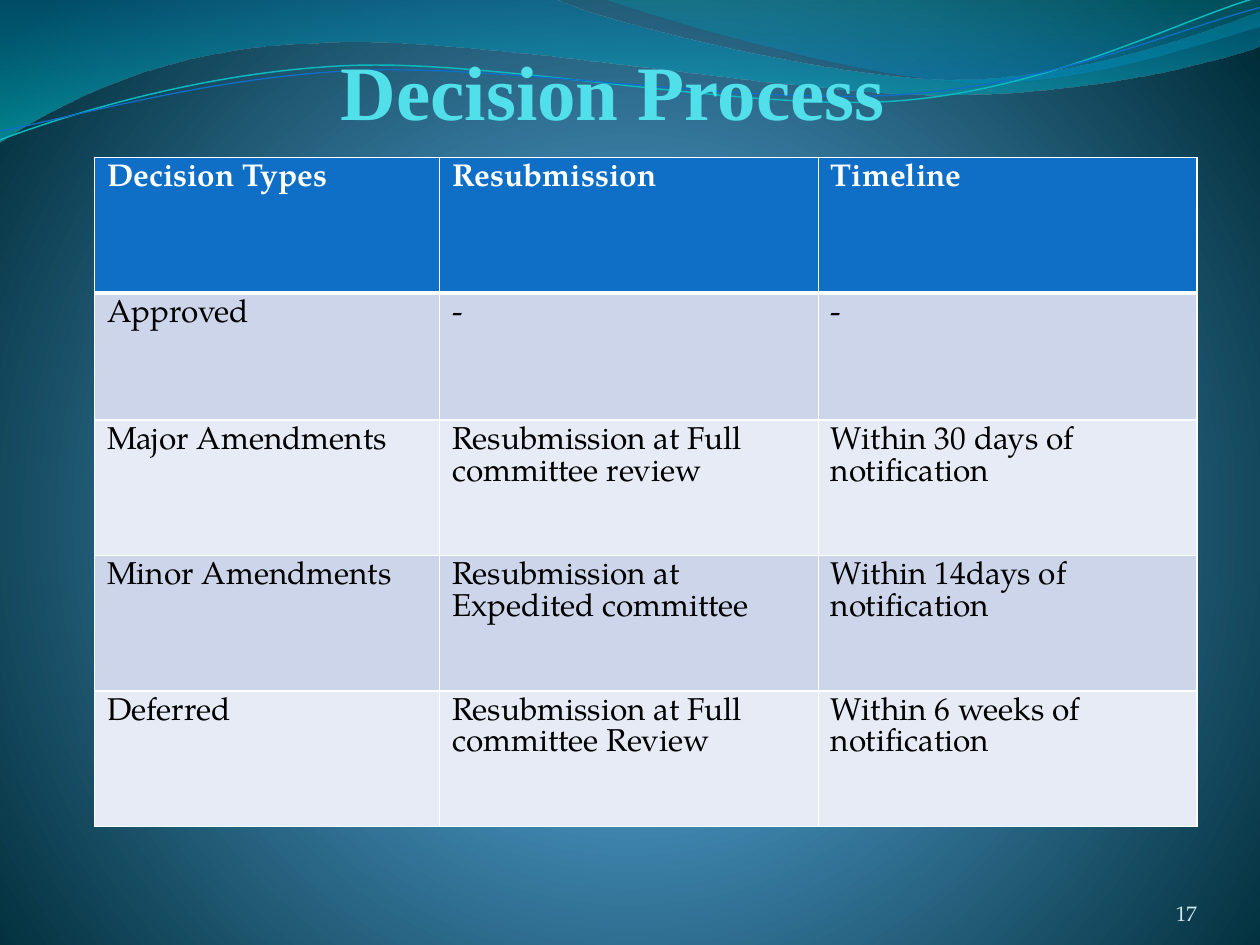
"""Build the Decision Process slide: wave decoration, title, decision table and page number."""
import math
from dataclasses import dataclass
from typing import Optional

from lxml import etree
from pptx import Presentation
from pptx import util as u
from pptx.dml.color import RGBColor
from pptx.enum import text
from pptx.oxml import ns

WHITE = RGBColor(0xFF, 0xFF, 0xFF)
BLACK = RGBColor(0x00, 0x00, 0x00)
TITLE_CYAN = RGBColor(0x51, 0xE0, 0xEA)
NUMBER_CYAN = RGBColor(0xD1, 0xEA, 0xEE)
BLUE = RGBColor(0x0F, 0x6F, 0xC6)
TEAL = RGBColor(0x0A, 0xB8, 0xBF)
DARK_BAND = RGBColor(0xCC, 0xD5, 0xEA)
LIGHT_BAND = RGBColor(0xE7, 0xEB, 0xF5)
BODY_FONT = "TeX Gyre Pagella"
TITLE_FONT = "Times New Roman"
LINE_TILT = -2.7


@dataclass(frozen=True)
class Stop:
    position: int
    color: RGBColor
    opacity: int = 100


@dataclass(frozen=True)
class Wave:
    start: tuple[float, float]
    segments: list[tuple[float, ...]]
    stops: Optional[list[Stop]] = None
    line_color: Optional[RGBColor] = None
    line_width: float = 0
    pivot: tuple[float, float] = (0, 0)
    tilt: float = 0


BACKGROUND_STOPS = [
    Stop(0, RGBColor(0x4A, 0xA0, 0xD6)),
    Stop(25, RGBColor(0x4C, 0x98, 0xC7)),
    Stop(100, RGBColor(0x00, 0x2C, 0x38)),
]
WAVES = [
    Wave((0, 0), [(4.4, -0.01), (4.76, 0.17, 6.64, 0.63, 7.58, 0.63),
                  (8.53, 0.63, 9.58, 0.26, 10, 0.09), (10.01, 0.36),
                  (9.83, 0.44, 8.7, 0.76, 7.46, 0.75),
                  (6.22, 0.75, 3.82, 0.28, 2.57, 0.34),
                  (1.29, 0.36, 0.46, 0.83, -0.01, 1.13), (0, 0)],
         stops=[Stop(0, RGBColor(0x00, 0x74, 0xA1), 45),
                Stop(100, RGBColor(0x00, 0xC6, 0xCF), 55)]),
    Wave((4.79, -0.01), [(5.09, 0.11, 6.82, 0.62, 7.69, 0.65),
                         (8.56, 0.69, 9.61, 0.32, 10, 0.21), (10, 0), (4.79, -0.01)],
         stops=[Stop(0, RGBColor(0x00, 0xA1, 0xA9), 30),
                Stop(80, RGBColor(0x00, 0x8B, 0xBF), 45)]),
    Wave((0, 1.11), [(0.48, 0.93, 1.58, 0.57, 2.77, 0.52),
                     (3.95, 0.47, 5.93, 0.89, 7.13, 0.8),
                     (8.33, 0.71, 9.38, 0.15, 9.98, -0.02)],
         line_color=TEAL, line_width=0.85, pivot=(4.99, 0.58), tilt=LINE_TILT),
    Wave((0, 1.04), [(0.47, 0.96, 1.64, 0.61, 2.83, 0.56),
                     (4.03, 0.51, 5.97, 0.84, 7.17, 0.75),
                     (8.36, 0.67, 9.41, 0.21, 10, 0.06)],
         line_color=BLUE, line_width=0.75, pivot=(5, 0.59), tilt=LINE_TILT),
]
TABLE_WIDTH, TABLE_HEIGHT = 8.75, 5.31
FIRST_COLUMN, APPROVED_ROW = 2.74, 1.01
COLUMN_WIDTHS = [FIRST_COLUMN] + [(TABLE_WIDTH - FIRST_COLUMN) / 2] * 2
ROW_HEIGHTS = [(TABLE_HEIGHT - APPROVED_ROW) / 4] * 5
ROW_HEIGHTS[1] = APPROVED_ROW
DECISIONS = [
    ("Decision Types", "Resubmission", "Timeline"),
    ("Approved", "-", "-"),
    ("Major Amendments", "Resubmission at Full committee review",
     "Within 30 days of notification"),
    ("Minor Amendments", "Resubmission at Expedited committee",
     "Within 14days of notification"),
    ("Deferred", "Resubmission at Full committee Review",
     "Within 6 weeks of notification"),
]


def apply_gradient(owner, stops: list[Stop], circular: bool = False) -> None:
    """Replace the empty fill inside an element with a gradient."""
    gradient = etree.Element(ns.qn("a:gradFill"), rotWithShape="1")
    stop_list = etree.SubElement(gradient, ns.qn("a:gsLst"))
    for stop in stops:
        entry = etree.SubElement(stop_list, ns.qn("a:gs"), pos=str(stop.position * 1000))
        color = etree.SubElement(entry, ns.qn("a:srgbClr"), val=str(stop.color))
        if stop.opacity < 100:
            etree.SubElement(color, ns.qn("a:alpha"), val=str(stop.opacity * 1000))
    if circular:
        shade = etree.SubElement(gradient, ns.qn("a:path"), attrib={"path": "circle"})
        etree.SubElement(shade, ns.qn("a:fillToRect"),
                         l="10000", t="110000", r="10000", b="100000")
    else:
        etree.SubElement(gradient, ns.qn("a:lin"), ang="5400000", scaled="1")
    empty_fill = owner.find(".//" + ns.qn("a:noFill"))
    empty_fill.getparent().replace(empty_fill, gradient)


def to_local(wave: Wave, x: float, y: float) -> tuple[int, int]:
    """Undo the tilt of a wave point and return it in EMU."""
    angle = math.radians(-wave.tilt)
    dx, dy = x - wave.pivot[0], y - wave.pivot[1]
    return (u.Inches(wave.pivot[0] + dx * math.cos(angle) - dy * math.sin(angle)),
            u.Inches(wave.pivot[1] + dx * math.sin(angle) + dy * math.cos(angle)))


def bend_segments(shape, wave: Wave) -> None:
    """Join each run of three control points into one Bezier segment."""
    lines = iter(list(shape._element.iter(ns.qn("a:lnTo"))))
    for segment in wave.segments:
        line = next(lines)
        if len(segment) == 2:
            continue
        curve = etree.Element(ns.qn("a:cubicBezTo"))
        line.addprevious(curve)
        for part in (line, next(lines), next(lines)):
            curve.append(part[0])
            part.getparent().remove(part)


def draw_wave(slide, wave: Wave) -> None:
    """Draw one wave as a gradient band or an open line."""
    points = [to_local(wave, *segment[i:i + 2])
              for segment in wave.segments for i in range(0, len(segment), 2)]
    builder = slide.shapes.build_freeform(*to_local(wave, *wave.start))
    builder.add_line_segments(points, close=wave.stops is not None)
    shape = builder.convert_to_shape()
    bend_segments(shape, wave)
    shape.rotation = wave.tilt % 360
    shape.shadow.inherit = False
    shape.fill.background()
    if wave.stops:
        apply_gradient(shape._element, wave.stops)
        shape.line.fill.background()
    else:
        shape.line.color.rgb = wave.line_color
        shape.line.width = u.Pt(wave.line_width)


def format_text(frame, content: str, font_name: str, size: float, color: RGBColor,
                bold: bool = False, alignment=text.PP_ALIGN.LEFT) -> None:
    """Write one paragraph with a uniform font."""
    frame.text = content
    paragraph = frame.paragraphs[0]
    paragraph.alignment = alignment
    paragraph.font.name, paragraph.font.size = font_name, u.Pt(size)
    paragraph.font.bold = bold
    paragraph.font.color.rgb = color


def anchor_bottom(frame, right_margin: float = 0) -> None:
    """Wrap text, anchor it at the bottom and remove the margins."""
    frame.word_wrap = True
    frame.auto_size = text.MSO_AUTO_SIZE.NONE
    frame.vertical_anchor = text.MSO_ANCHOR.BOTTOM
    frame.margin_left = frame.margin_top = frame.margin_bottom = 0
    frame.margin_right = u.Inches(right_margin)


def draw_title(slide) -> None:
    """Place the title in front of the waves."""
    title = slide.shapes.title
    title.left, title.top = u.Inches(0.58), u.Inches(0.25)
    title.width, title.height = u.Inches(8.59), u.Inches(0.83)
    anchor_bottom(title.text_frame, 0.02)
    format_text(title.text_frame, "Decision Process", TITLE_FONT, 44, TITLE_CYAN,
                True, text.PP_ALIGN.CENTER)
    slide.shapes._spTree.append(title._element)


def draw_page_number(slide) -> None:
    """Place the page number at the lower right."""
    box = slide.shapes.add_textbox(u.Inches(8.67), u.Inches(6.95), u.Inches(0.83), u.Inches(0.4))
    anchor_bottom(box.text_frame)
    format_text(box.text_frame, "17", BODY_FONT, 12, NUMBER_CYAN, alignment=text.PP_ALIGN.RIGHT)


def add_borders(cell, top: float, bottom: float) -> None:
    """Give a cell white borders with the given top and bottom widths."""
    properties = cell._tc.get_or_add_tcPr()
    for side, width in (("L", 1), ("R", 1), ("T", top), ("B", bottom)):
        line = etree.SubElement(properties, ns.qn("a:ln" + side), w=str(u.Pt(width)))
        fill = etree.SubElement(line, ns.qn("a:solidFill"))
        etree.SubElement(fill, ns.qn("a:srgbClr"), val=str(WHITE))


def draw_table(slide) -> None:
    """Draw the decision table with a header and alternating bands."""
    table = slide.shapes.add_table(
        len(DECISIONS), len(COLUMN_WIDTHS), u.Inches(0.75), u.Inches(1.25),
        u.Inches(TABLE_WIDTH), u.Inches(TABLE_HEIGHT)).table
    for column, width in zip(table.columns, COLUMN_WIDTHS):
        column.width = u.Inches(width)
    for index, (row, height, contents) in enumerate(zip(table.rows, ROW_HEIGHTS, DECISIONS)):
        row.height = u.Inches(height)
        header = index == 0
        band = BLUE if header else DARK_BAND if index % 2 else LIGHT_BAND
        for cell, content in zip(row.cells, contents):
            add_borders(cell, 3 if index == 1 else 1, 3 if header else 1)
            cell.fill.solid()
            cell.fill.fore_color.rgb = band
            format_text(cell.text_frame, content, BODY_FONT, 18,
                        WHITE if header else BLACK, header)


def main() -> None:
    """Build and save the presentation."""
    presentation = Presentation()
    presentation.slide_width, presentation.slide_height = u.Inches(10), u.Inches(7.5)
    slide = presentation.slides.add_slide(presentation.slide_layouts[5])
    slide.background.fill.background()
    apply_gradient(slide._element, BACKGROUND_STOPS, circular=True)
    for wave in WAVES:
        draw_wave(slide, wave)
    draw_title(slide)
    draw_page_number(slide)
    draw_table(slide)
    presentation.save("out.pptx")


if __name__ == "__main__":
    main()
